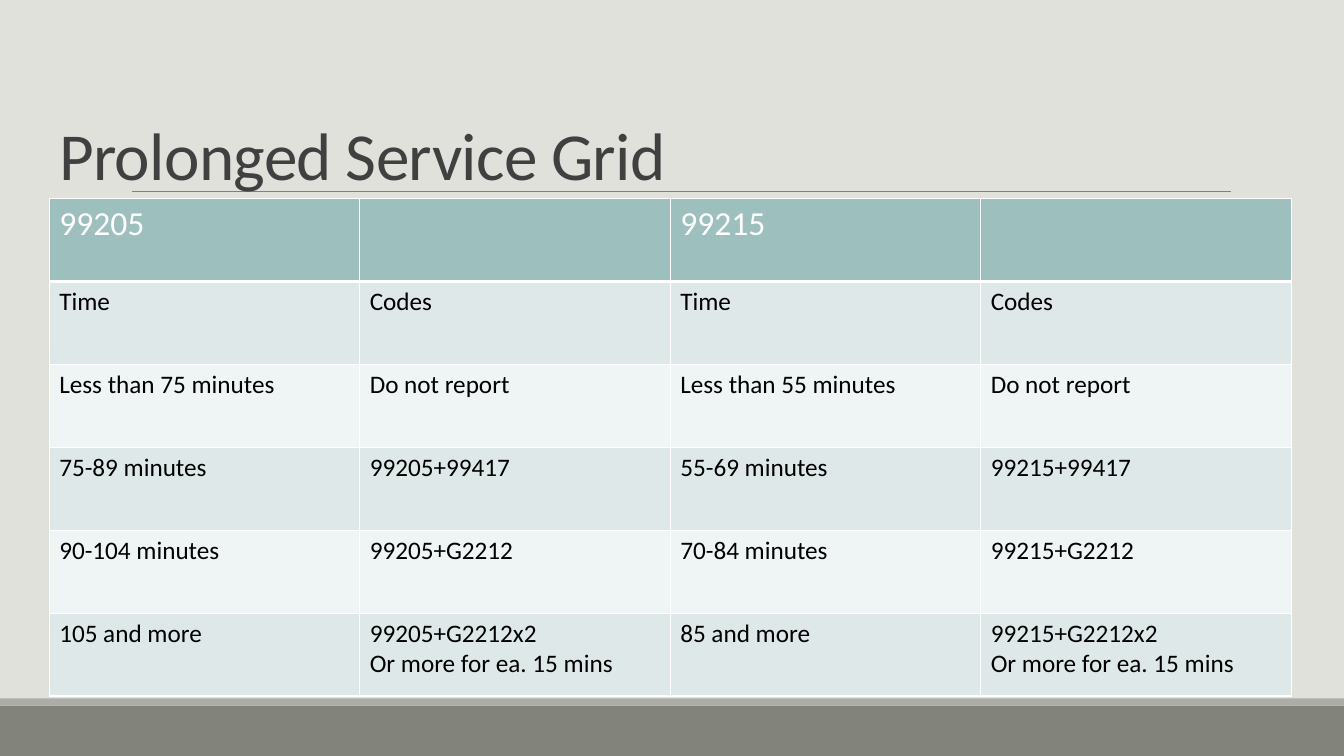
from lxml.etree import SubElement
from pptx import Presentation
from pptx.dml.color import RGBColor
from pptx.enum.shapes import MSO_CONNECTOR as Connector, MSO_SHAPE as Preset
from pptx.enum.text import MSO_ANCHOR as Anchor, PP_ALIGN as Align
from pptx.oxml import parse_xml
from pptx.oxml.ns import nsdecls, qn
from pptx.util import Cm, Pt

FONT = "Calibri"
BACKGROUND = RGBColor(0xE1, 0xE1, 0xDB)
FOOTER = RGBColor(0x82, 0x84, 0x7C)
FOOTER_EDGE = RGBColor(0xAC, 0xAD, 0xA8)
RULE = RGBColor(0x80, 0x80, 0x80)
TITLE = RGBColor(0x40, 0x40, 0x40)
HEADER = RGBColor(0x9D, 0xBF, 0xBE)
BAND_DARK = RGBColor(0xDF, 0xE8, 0xE8)
BAND_LIGHT = RGBColor(0xEF, 0xF4, 0xF4)
WHITE = RGBColor(0xFF, 0xFF, 0xFF)
BLACK = RGBColor(0x00, 0x00, 0x00)

SLIDE_WIDTH = Cm(33.87)
MARGIN = Cm(1.24)

SERVICE_ROWS = [
    ["99205", "", "99215", ""],
    ["Time", "Codes", "Time", "Codes"],
    ["Less than 75 minutes", "Do not report", "Less than 55 minutes", "Do not report"],
    ["75-89 minutes", "99205+99417", "55-69 minutes", "99215+99417"],
    ["90-104 minutes", "99205+G2212", "70-84 minutes", "99215+G2212"],
    ["105 and more", "99205+G2212x2\nOr more for ea. 15 mins",
     "85 and more", "99215+G2212x2\nOr more for ea. 15 mins"],
]


def add_run(paragraph, text, size, color):
    run = paragraph.add_run()
    run.text = text
    run.font.name = FONT
    run.font.size = Pt(size)
    run.font.color.rgb = color
    return run


def add_bar(slide, top, height, color):
    """Add a full-width bar at the foot of the slide."""
    bar = slide.shapes.add_shape(Preset.RECTANGLE, 0, top, SLIDE_WIDTH, height)
    bar.shadow.inherit = False
    bar.fill.solid()
    bar.fill.fore_color.rgb = color
    bar.line.fill.background()


def add_title_rule(slide):
    rule = slide.shapes.add_connector(
        Connector.STRAIGHT, Cm(3.33), Cm(4.83), Cm(31.01), Cm(4.83))
    rule.line.color.rgb = RULE
    rule.line.width = Pt(0.5)
    SubElement(rule._element.spPr, qn("a:effectLst"))


def place_title(slide, text):
    title = slide.shapes.title
    title.left, title.top, title.width, title.height = (
        MARGIN, Cm(0.79), Cm(29.74), Cm(4.22))
    frame = title.text_frame
    frame.word_wrap = True
    frame.vertical_anchor = Anchor.BOTTOM
    paragraph = frame.paragraphs[0]
    paragraph.alignment = Align.LEFT
    paragraph.line_spacing = 0.85
    run = add_run(paragraph, text, 48, TITLE)
    run._r.get_or_add_rPr().set("spc", "-50")
    slide.shapes._spTree.append(title._element)


def set_borders(cell, bottom_width):
    widths = {"lnL": 1, "lnR": 1, "lnT": 1, "lnB": bottom_width}
    properties = cell._tc.get_or_add_tcPr()
    for position, (side, width) in enumerate(widths.items()):
        properties.insert(position, parse_xml(
            f'<a:{side} {nsdecls("a")} w="{Pt(width)}"><a:solidFill>'
            f'<a:srgbClr val="{WHITE}"/></a:solidFill></a:{side}>'))


def fill_cell(cell, text, size, color, background, bottom_width):
    cell.fill.solid()
    cell.fill.fore_color.rgb = background
    set_borders(cell, bottom_width)
    frame = cell.text_frame
    for index, line in enumerate(text.split("\n")):
        paragraph = frame.add_paragraph() if index else frame.paragraphs[0]
        if line:
            add_run(paragraph, line, size, color)


def add_service_table(slide):
    table = slide.shapes.add_table(
        len(SERVICE_ROWS), len(SERVICE_ROWS[0]),
        MARGIN, Cm(5), Cm(31.3), Cm(12.54)).table
    for row, texts in enumerate(SERVICE_ROWS):
        if row == 0:
            style = (24, WHITE, HEADER, 3)
        else:
            style = (18, BLACK, BAND_DARK if row % 2 else BAND_LIGHT, 1)
        for column, text in enumerate(texts):
            fill_cell(table.cell(row, column), text, *style)


def main():
    presentation = Presentation()
    presentation.slide_width = SLIDE_WIDTH
    presentation.slide_height = Cm(19.05)
    slide = presentation.slides.add_slide(presentation.slide_layouts[5])
    slide.background.fill.solid()
    slide.background.fill.fore_color.rgb = BACKGROUND
    add_bar(slide, Cm(17.78), Cm(1.27), FOOTER)
    add_bar(slide, Cm(17.6), Cm(0.18), FOOTER_EDGE)
    add_title_rule(slide)
    place_title(slide, "Prolonged Service Grid")
    add_service_table(slide)
    presentation.save("out.pptx")


if __name__ == "__main__":
    main()
